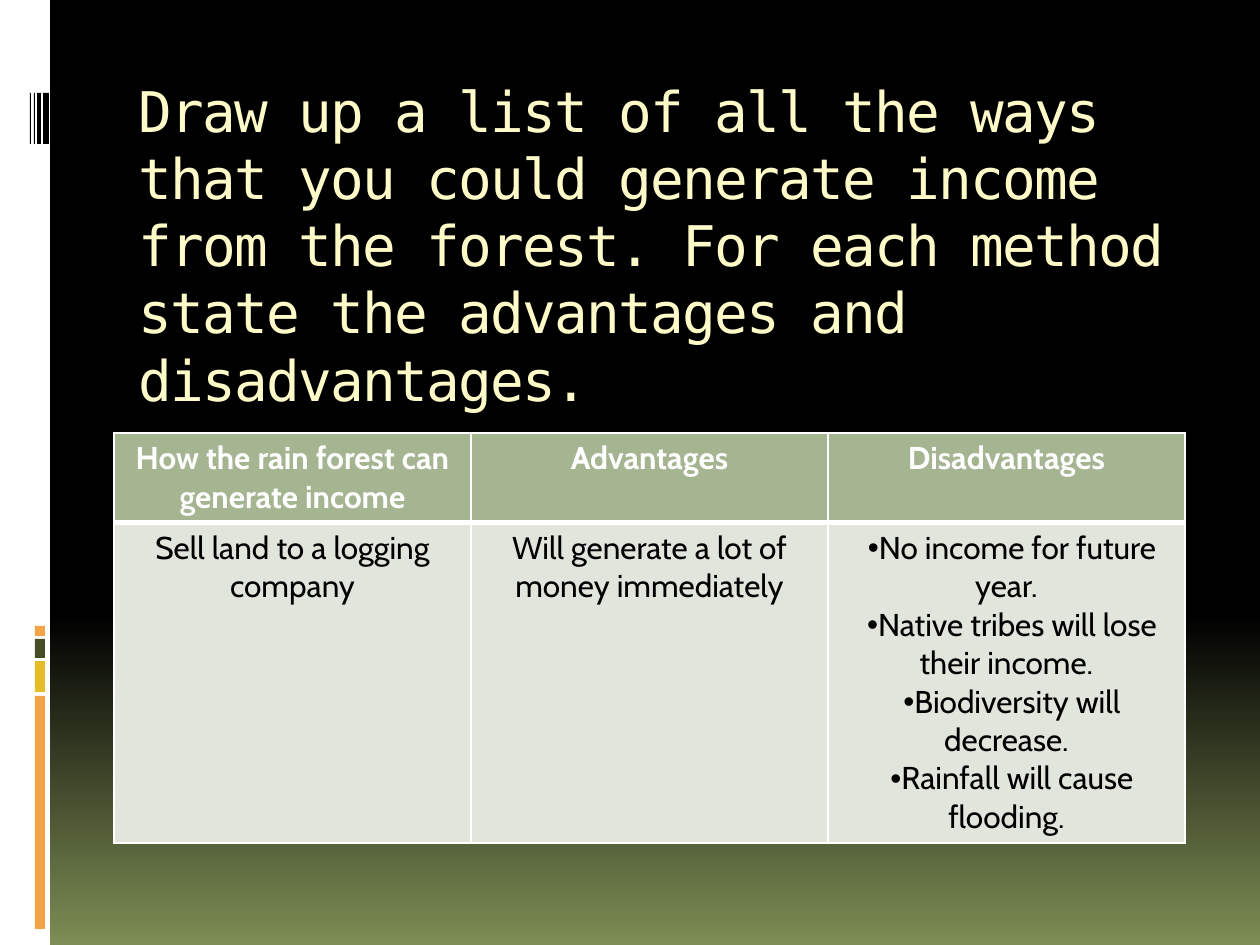
from lxml.etree import SubElement
from pptx import Presentation
from pptx.dml.color import RGBColor as RGB
from pptx.enum.shapes import MSO_SHAPE as Shape
from pptx.enum.text import MSO_ANCHOR as Anchor, MSO_AUTO_SIZE as Fit, PP_ALIGN as Align
from pptx.oxml.ns import qn
from pptx.util import Emu, Pt

WHITE = RGB(0xFF, 0xFF, 0xFF)
BLACK = RGB(0x00, 0x00, 0x00)
CREAM = RGB(0xFF, 0xFB, 0xC8)
OLIVE = RGB(0x7D, 0x8D, 0x54)
MOSS = RGB(0x44, 0x4D, 0x26)
AMBER = RGB(0xF3, 0xA4, 0x47)
GOLD = RGB(0xE7, 0xBC, 0x29)
SAGE = RGB(0xA5, 0xB5, 0x92)
MIST = RGB(0xE1, 0xE5, 0xDC)

TITLE = ("Draw up a list of all the ways that you could generate income from the forest. "
         "For each method state the advantages and disadvantages.")
HEADS = ["How the rain forest can generate income", "Advantages", "Disadvantages"]
BODY = ["Sell land to a logging company", "Will generate a lot of money immediately",
        "No income for future year.\nNative tribes will lose their income.\n"
        "Biodiversity will decrease.\nRainfall will cause flooding."]
STRIPES = [(626, 10, AMBER), (639, 19, MOSS), (661, 31, GOLD), (696, 233, AMBER)]
BARS = [(30, 1), (34, 1), (37, 4), (43, 6)]


def px(n):
    """Turn pixels into EMU."""
    return Emu(round(n * 914400 / 126))


def paint(slide):
    """Fade the background from black to olive."""
    fill = slide.background.fill
    fill.gradient()
    fill.gradient_angle = 270
    for stop, (pos, color) in zip(fill.gradient_stops, [(0.65, BLACK), (1, OLIVE)]):
        stop.position = pos
        stop.color.rgb = color


def block(slide, x, y, w, h, color):
    """Add a plain filled rectangle."""
    box = slide.shapes.add_shape(Shape.RECTANGLE, px(x), px(y), px(w), px(h))
    box.shadow.inherit = False
    box.fill.solid()
    box.fill.fore_color.rgb = color
    box.line.fill.background()


def style(par, font, size, color, bold=False):
    """Format every run of a paragraph."""
    for run in par.runs:
        run.font.name = font
        run.font.size = Pt(size)
        run.font.bold = bold
        run.font.color.rgb = color


def head(slide):
    """Place and format the title."""
    title = slide.shapes.title
    title.left, title.top, title.width, title.height = px(126), px(70), px(1071), px(126)
    frame = title.text_frame
    frame.text = TITLE
    frame.word_wrap = True
    frame.auto_size = Fit.NONE
    frame.vertical_anchor = Anchor.TOP
    par = frame.paragraphs[0]
    par.alignment = Align.LEFT
    par.line_spacing = Pt(38.4)
    style(par, "DejaVu Sans Mono", 32, CREAM)
    par.runs[0].font._element.set("spc", "-100")


def edge(cell, side, width):
    """Draw a white border on one side of a cell."""
    line = SubElement(cell._tc.get_or_add_tcPr(), qn(f"a:ln{side}"), w=str(Pt(width)))
    fill = SubElement(line, qn("a:solidFill"))
    SubElement(fill, qn("a:srgbClr"), val=str(WHITE))


def bullet(par):
    """Give a paragraph a round bullet."""
    props = par._p.get_or_add_pPr()
    props.set("marL", "0")
    props.set("indent", str(px(11)))
    SubElement(props, qn("a:buFont"), typeface="Arial")
    SubElement(props, qn("a:buChar"), char="•")


def write(cell, text, top):
    """Fill in a header or body cell."""
    for side, width in [("L", 1), ("R", 1), ("T", 1 if top else 3), ("B", 3 if top else 1)]:
        edge(cell, side, width)
    cell.fill.solid()
    cell.fill.fore_color.rgb = SAGE if top else MIST
    cell.text_frame.text = text
    pars = cell.text_frame.paragraphs
    for par in pars:
        par.alignment = Align.CENTER
        style(par, "Cabin", 18, WHITE if top else BLACK, top)
        if len(pars) > 1:
            bullet(par)


def grid(slide):
    """Add the table of methods."""
    table = slide.shapes.add_table(2, 3, px(114), px(433), px(1071), px(409)).table
    table.horz_banding = False
    for row, high in zip(table.rows, (89, 320)):
        row.height = px(high)
    for r, texts in enumerate([HEADS, BODY]):
        for c, text in enumerate(texts):
            write(table.cell(r, c), text, r == 0)


def main():
    """Build and save the slide."""
    deck = Presentation()
    deck.slide_width, deck.slide_height = px(1260), px(945)
    slide = deck.slides.add_slide(deck.slide_layouts[5])
    paint(slide)
    block(slide, 0, 0, 50, 945, WHITE)
    for y, h, color in STRIPES:
        block(slide, 35, y, 10, h, color)
    for x, w in BARS:
        block(slide, x, 93, w, 51, BLACK)
    head(slide)
    grid(slide)
    deck.save("out.pptx")


if __name__ == "__main__":
    main()
